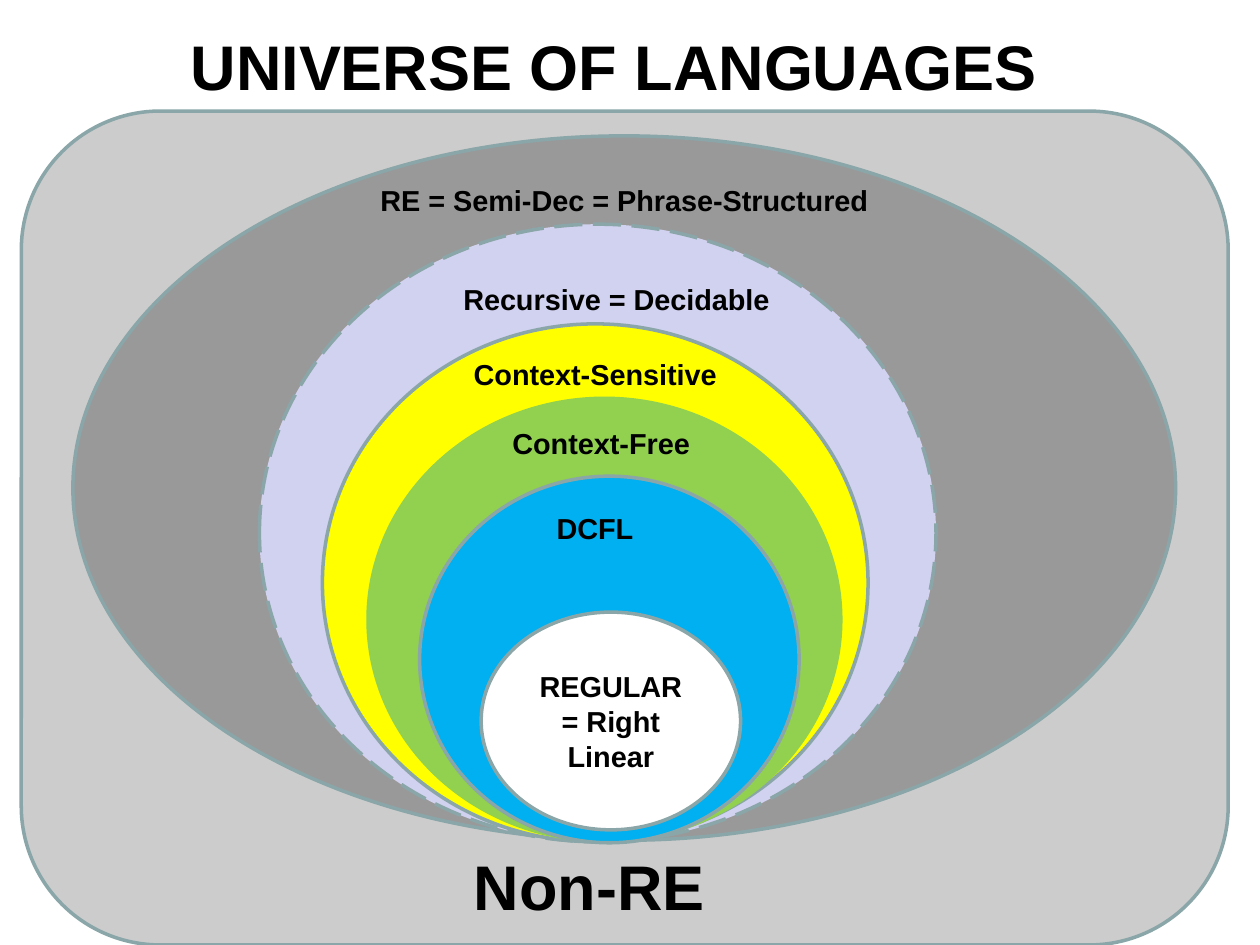
"""Build a slide of nested ellipses showing the classes of formal languages."""
from pptx import Presentation
from pptx.dml.color import RGBColor
from pptx.enum.dml import MSO_LINE
from pptx.enum.shapes import MSO_SHAPE
from pptx.enum.text import MSO_ANCHOR, MSO_AUTO_SIZE, PP_ALIGN
from pptx.util import Cm, Pt


def color(value):
    return RGBColor.from_string(value)


class SlideBuilder:
    font_format = {"name": "Arial", "bold": True}
    text_color = "000000"
    outline = "8AA6A8"
    heading_size = 36
    label_size = 16.5
    label_height = 0.97

    def __init__(self, deck):
        self.slide = deck.slides.add_slide(deck.slide_layouts[5])

    def set_text(self, box, text, size, align, anchor, auto_size):
        frame = box.text_frame
        frame_format = {"word_wrap": True, "vertical_anchor": anchor, "auto_size": auto_size}
        for name, value in frame_format.items():
            setattr(frame, name, value)
        para = frame.paragraphs[0]
        para.alignment = align
        span = para.add_run()
        span.text = text
        for name, value in {**self.font_format, "size": Pt(size)}.items():
            setattr(span.font, name, value)
        span.font.color.rgb = color(self.text_color)

    def title(self, text, place):
        box = self.slide.shapes.title
        for name, value in zip(("left", "top", "width", "height"), place):
            setattr(box, name, Cm(value))
        self.set_text(box, text, self.heading_size, PP_ALIGN.CENTER,
                      MSO_ANCHOR.TOP, MSO_AUTO_SIZE.SHAPE_TO_FIT_TEXT)

    def label(self, text, place, size=label_size):
        box = self.slide.shapes.add_textbox(*map(Cm, place))
        self.set_text(box, text, size, PP_ALIGN.LEFT,
                      MSO_ANCHOR.TOP, MSO_AUTO_SIZE.SHAPE_TO_FIT_TEXT)

    def region(self, kind, place, fill, line=outline, dash=None):
        shape = self.slide.shapes.add_shape(kind, *map(Cm, place))
        shape.shadow.inherit = False
        shape.fill.solid()
        shape.fill.fore_color.rgb = color(fill)
        shape.line.color.rgb = color(line)
        for name, value in {"width": Pt(2), "dash_style": dash}.items():
            setattr(shape.line, name, value)
        return shape

    def language_class(self, text, label_place, place, fill, **line_format):
        self.region(MSO_SHAPE.OVAL, place, fill, **line_format)
        self.label(text, (*label_place, self.label_height))

    def core(self, text, place, fill):
        shape = self.region(MSO_SHAPE.OVAL, place, fill)
        self.set_text(shape, text, self.label_size, PP_ALIGN.CENTER,
                      MSO_ANCHOR.MIDDLE, MSO_AUTO_SIZE.NONE)


LANGUAGE_CLASSES = [
    ("RE = Semi-Dec = Phrase-Structured", (7.42, 3.56, 10.62),
     (1.47, 2.74, 22.23, 14.2), "999999", {}),
    ("Recursive = Decidable", (9.09, 5.56, 7.01),
     (5.23, 4.52, 13.64, 12.45), "D1D1F0", {"dash": MSO_LINE.LONG_DASH}),
    ("Context-Sensitive", (9.3, 7.06, 5.77),
     (6.5, 6.53, 11, 10.44), "FFFF00", {}),
    ("Context-Free", (10.08, 8.46, 4.24),
     (7.42, 8.03, 9.53, 8.92), "92D050", {"line": "92D050"}),
    ("DCFL", (10.97, 10.16, 2.06),
     (8.46, 9.6, 7.65, 7.39), "00B0F0", {}),
]


def main():
    deck = Presentation()
    for name, value in {"slide_width": Cm(25.4), "slide_height": Cm(19.05)}.items():
        setattr(deck, name, value)
    page = SlideBuilder(deck)
    page.title("UNIVERSE OF LANGUAGES", (1.9, 0.43, 20.96, 1.8))
    page.region(MSO_SHAPE.ROUNDED_RECTANGLE, (0.43, 2.24, 24.33, 16.81), "CCCCCC")
    page.label("Non-RE", (9.3, 16.97, 6.15, 1.8), page.heading_size)
    for text, label_place, place, fill, line_format in LANGUAGE_CLASSES:
        page.language_class(text, label_place, place, fill, **line_format)
    page.core("REGULAR = Right Linear", (9.7, 12.34, 5.23, 4.39), "FFFFFF")
    deck.save("out.pptx")


if __name__ == "__main__":
    main()
